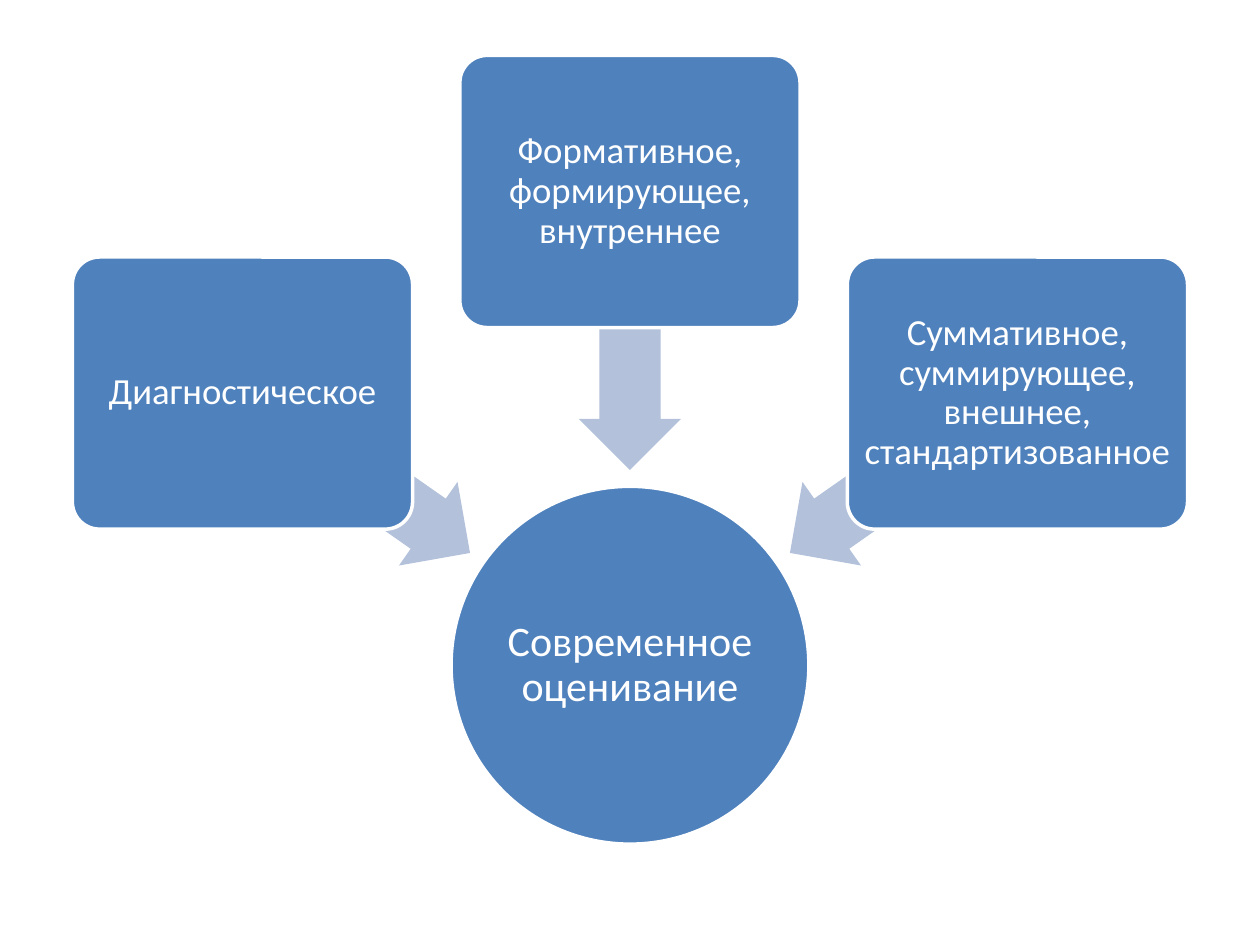
from pptx import Presentation
from pptx.dml.color import RGBColor
from pptx.enum.shapes import MSO_SHAPE as Shape
from pptx.enum.text import MSO_ANCHOR as Anchor, PP_ALIGN as Align
from pptx.util import Pt

BLUE, PALE_BLUE, WHITE = "4F81BD", "B3C1DB", "FFFFFF"
CENTER_X = 360
CIRCLE_TOP, CIRCLE_SIZE = 277.92, 204.48
BOX_WIDTH, BOX_HEIGHT = 194.4, 155.52
ARROW_LENGTH, ARROW_WIDTH = 159.12, 58.32

presentation = Presentation()
presentation.slide_width, presentation.slide_height = Pt(720), Pt(540)
slide = presentation.slides.add_slide(presentation.slide_layouts[6])


def add_filled(kind, center_x, top, width, height, color):
    shape = slide.shapes.add_shape(
        kind, Pt(center_x - width / 2), Pt(top), Pt(width), Pt(height))
    shape.shadow.inherit = False
    shape.fill.solid()
    shape.fill.fore_color.rgb = RGBColor.from_string(color)
    shape.line.fill.background()
    return shape


def add_label(shape, text, size, inset):
    shape.line.color.rgb = RGBColor.from_string(WHITE)
    shape.line.width = Pt(2)
    frame = shape.text_frame
    frame.text = text
    frame.word_wrap = True
    frame.vertical_anchor = Anchor.MIDDLE
    frame.margin_left = frame.margin_right = Pt(inset)
    frame.margin_top = frame.margin_bottom = Pt(inset)
    paragraph = frame.paragraphs[0]
    paragraph.alignment = Align.CENTER
    paragraph.line_spacing = 0.9
    font = paragraph.runs[0].font
    font.name, font.size = "Calibri", Pt(size)
    font.color.rgb = RGBColor.from_string(WHITE)


# Central circle
circle = add_filled(Shape.OVAL, CENTER_X, CIRCLE_TOP, CIRCLE_SIZE, CIRCLE_SIZE, BLUE)
add_label(circle, "Современное оценивание", 24, 1)

# Kinds of assessment: side, box top, arrow middle, arrow rotation, text
branches = [
    (-1, 146.88, 270.36, 215, "Диагностическое"),
    (0, 31.68, 189, 270, "Формативное, формирующее, внутреннее"),
    (1, 146.88, 270.36, 325, "Суммативное, суммирующее, внешнее, стандартизованное"),
]
for side, box_top, arrow_middle, rotation, text in branches:
    # Arrow towards the circle, partly behind its box
    arrow = add_filled(Shape.LEFT_ARROW, CENTER_X + side * 156.6,
                       arrow_middle - ARROW_WIDTH / 2, ARROW_LENGTH, ARROW_WIDTH, PALE_BLUE)
    arrow.adjustments[0], arrow.adjustments[1] = 0.6, 0.5
    arrow.rotation = rotation

    # Box
    box = add_filled(Shape.ROUNDED_RECTANGLE, CENTER_X + side * 221.4,
                     box_top, BOX_WIDTH, BOX_HEIGHT, BLUE)
    box.adjustments[0] = 0.1
    add_label(box, text, 21, 2.88)

presentation.save("out.pptx")
